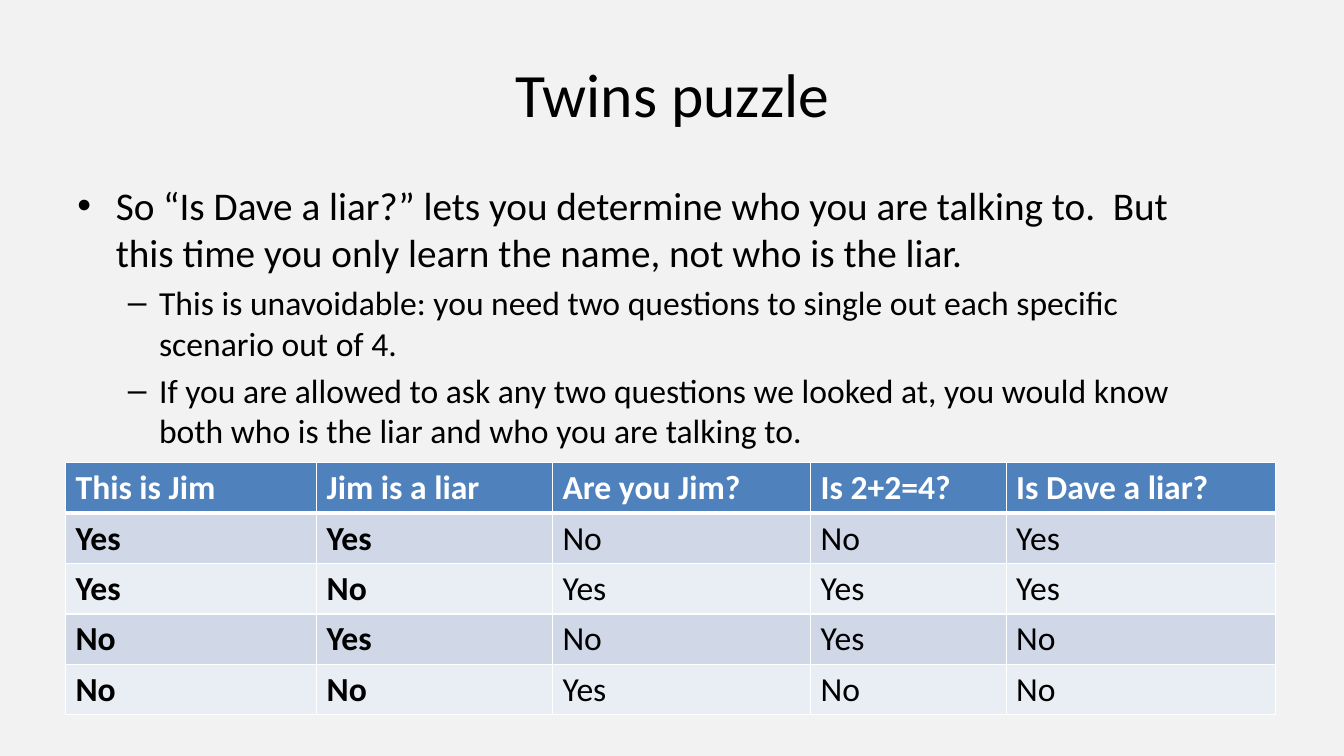
from lxml import etree
from pptx import Presentation
from pptx.dml.color import RGBColor
from pptx.enum.text import MSO_ANCHOR, PP_ALIGN
from pptx.oxml.ns import qn
from pptx.util import Inches, Pt

CENTER = PP_ALIGN.CENTER
MIDDLE = MSO_ANCHOR.MIDDLE
FONT = "Calibri"
BLACK, WHITE = "000000", "FFFFFF"
BACKGROUND = "F2F2F2"
HEADER_FILL = "4F81BD"
BAND_FILLS = ["D0D8E8", "E9EDF4"]

# Per level: bullet, text size, left margin, hanging indent
LEVELS = [("•", 28, 0.38, -0.38), ("–", 24, 0.81, -0.31)]
POINTS = [
    (0, "So “Is Dave a liar?” lets you determine who you are talking to.  "
        "But this time you only learn the name, not who is the liar."),
    (1, "This is unavoidable: you need two questions to single out each "
        "specific scenario out of 4."),
    (1, "If you are allowed to ask any two questions we looked at, you would "
        "know both who is the liar and who you are talking to."),
]

COLUMN_WIDTHS = [2.49, 2.34, 2.56, 1.94, 2.67]
ANSWERS = [
    ["This is Jim", "Jim is a liar", "Are you Jim?", "Is 2+2=4?", "Is Dave a liar?"],
    ["Yes", "Yes", "No", "No", "Yes"],
    ["Yes", "No", "Yes", "Yes", "Yes"],
    ["No", "Yes", "No", "Yes", "No"],
    ["No", "No", "Yes", "No", "No"],
]


def rgb(color):
    return RGBColor.from_string(color)


def set_font(p, size, color=BLACK, bold=False):
    p.font.name = FONT
    p.font.size = Pt(size)
    p.font.bold = bold
    p.font.color.rgb = rgb(color)


def add_text_frame(slide, box):
    tf = slide.shapes.add_textbox(*map(Inches, box)).text_frame
    tf.word_wrap = True
    return tf


def add_title(slide, box, text):
    tf = add_text_frame(slide, box)
    tf.vertical_anchor = MIDDLE
    p = tf.paragraphs[0]
    p.text = text
    p.alignment = CENTER
    set_font(p, 44)


def add_bullets(slide, box, points):
    tf = add_text_frame(slide, box)
    for i, (level, text) in enumerate(points):
        bullet, size, margin, indent = LEVELS[level]
        p = tf.add_paragraph() if i else tf.paragraphs[0]
        p.text = text
        p.level = level
        p.space_before = Pt(0.2 * size)
        set_font(p, size)
        # Hanging bullet
        pPr = p._p.get_or_add_pPr()
        pPr.set("marL", str(Inches(margin)))
        pPr.set("indent", str(Inches(indent)))
        bu_font = etree.Element(qn("a:buFont"), typeface="Arial")
        bu_char = etree.Element(qn("a:buChar"), char=bullet)
        pPr.find(qn("a:spcBef")).addnext(bu_font)
        bu_font.addnext(bu_char)


def set_borders(cell, **widths):
    tcPr = cell._tc.get_or_add_tcPr()
    for side, width in widths.items():
        ln = etree.SubElement(tcPr, qn(f"a:ln{side}"), w=str(Pt(width)))
        fill = etree.SubElement(ln, qn("a:solidFill"))
        etree.SubElement(fill, qn("a:srgbClr"), val=WHITE)


def add_answer_table(slide, box, rows):
    table = slide.shapes.add_table(len(rows), len(rows[0]), *map(Inches, box)).table
    for column, width in zip(table.columns, COLUMN_WIDTHS):
        column.width = Inches(width)
    for r, row in enumerate(rows):
        header = r == 0
        for c, text in enumerate(row):
            cell = table.cell(r, c)
            # Thick rule between header and body
            set_borders(cell, L=1, R=1, T=3 if r == 1 else 1, B=3 if header else 1)
            cell.fill.solid()
            cell.fill.fore_color.rgb = rgb(HEADER_FILL if header else BAND_FILLS[(r - 1) % 2])
            p = cell.text_frame.paragraphs[0]
            p.text = text
            set_font(p, 24, WHITE if header else BLACK, bold=header or c < 2)


def main():
    prs = Presentation()
    prs.slide_width, prs.slide_height = Inches(13.33), Inches(7.5)
    slide = prs.slides.add_slide(prs.slide_layouts[6])
    slide.background.fill.solid()
    slide.background.fill.fore_color.rgb = rgb(BACKGROUND)

    add_title(slide, (0.67, 0.3, 12, 1.25), "Twins puzzle")
    add_bullets(slide, (0.67, 1.75, 11.43, 5.54), POINTS)
    add_answer_table(slide, (0.65, 4.59, 12, 2.5), ANSWERS)
    prs.save("out.pptx")


if __name__ == "__main__":
    main()
